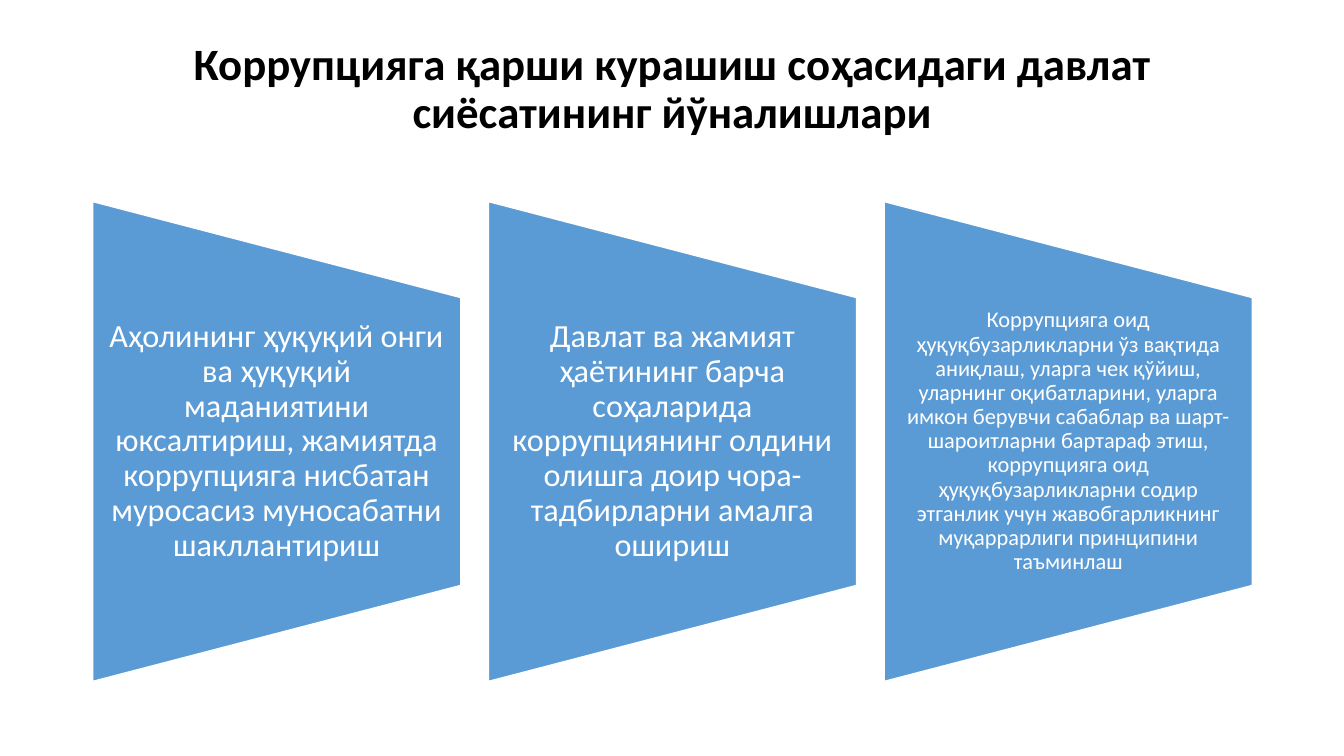
from pptx import Presentation
from pptx.dml.color import RGBColor
from pptx.enum.shapes import MSO_SHAPE
from pptx.enum.text import MSO_ANCHOR, MSO_AUTO_SIZE, PP_ALIGN
from pptx.util import Inches, Pt

TRAPEZOID = MSO_SHAPE.FLOWCHART_MANUAL_OPERATION
MIDDLE = MSO_ANCHOR.MIDDLE
CENTER = PP_ALIGN.CENTER
NO_AUTOFIT = MSO_AUTO_SIZE.NONE

COLORS = {"heading": "000000", "panel": "5B9BD5", "white": "FFFFFF"}


def write_text(frame, text, size, color, bold=False, side=0.1, top=0, bottom=0):
    frame.word_wrap = True
    frame.auto_size = NO_AUTOFIT
    frame.vertical_anchor = MIDDLE
    frame.margin_left = frame.margin_right = Inches(side)
    frame.margin_top, frame.margin_bottom = Inches(top), Inches(bottom)
    paragraph = frame.paragraphs[0]
    paragraph.alignment = CENTER
    paragraph.line_spacing = 0.9
    run = paragraph.add_run()
    run.text = text
    run.font.name = "Calibri"
    run.font.size = Pt(size)
    run.font.bold = bold
    run.font.color.rgb = RGBColor.from_string(COLORS[color])


presentation = Presentation()
presentation.slide_width = Inches(13.33)
presentation.slide_height = Inches(7.5)
slide = presentation.slides.add_slide(presentation.slide_layouts[5])

heading = slide.shapes.title
heading.left, heading.top = Inches(0.92), Inches(0.41)
heading.width, heading.height = Inches(11.5), Inches(1.45)
write_text(
    heading.text_frame,
    "Коррупцияга қарши курашиш соҳасидаги давлат сиёсатининг йўналишлари",
    size=32, color="heading", bold=True, top=0.05, bottom=0.53,
)

directions = [
    ("Аҳолининг ҳуқуқий онги ва ҳуқуқий маданиятини юксалтириш, жамиятда "
     "коррупцияга нисбатан муросасиз муносабатни шакллантириш", 23, 0.16),
    ("Давлат ва жамият ҳаётининг барча соҳаларида коррупциянинг олдини "
     "олишга доир чора-тадбирларни амалга ошириш", 23, 0.16),
    ("Коррупцияга оид ҳуқуқбузарликларни ўз вақтида аниқлаш, уларга чек "
     "қўйиш, уларнинг оқибатларини, уларга имкон берувчи сабаблар ва "
     "шарт-шароитларни бартараф этиш, коррупцияга оид ҳуқуқбузарликларни "
     "содир этганлик учун жавобгарликнинг муқаррарлиги принципини таъминлаш",
     16, 0.11),
]

FIRST_LEFT, STEP, CENTER_Y = 0.92, 3.925, 4.38
PANEL_WIDTH, PANEL_HEIGHT, TEXT_HEIGHT = 3.65, 4.76, 2.86

for index, (direction, size, side) in enumerate(directions):
    left = FIRST_LEFT + index * STEP
    panel = slide.shapes.add_shape(
        TRAPEZOID,
        Inches(left - (PANEL_HEIGHT - PANEL_WIDTH) / 2),
        Inches(CENTER_Y - PANEL_WIDTH / 2),
        Inches(PANEL_HEIGHT), Inches(PANEL_WIDTH),
    )
    panel.rotation = 270
    panel.shadow.inherit = False
    panel.fill.solid()
    panel.fill.fore_color.rgb = RGBColor.from_string(COLORS["panel"])
    panel.line.color.rgb = RGBColor.from_string(COLORS["white"])
    panel.line.width = Pt(1)

    caption = slide.shapes.add_textbox(
        Inches(left), Inches(CENTER_Y - TEXT_HEIGHT / 2),
        Inches(PANEL_WIDTH), Inches(TEXT_HEIGHT),
    )
    write_text(caption.text_frame, direction, size=size, color="white", side=side)

presentation.save("out.pptx")
